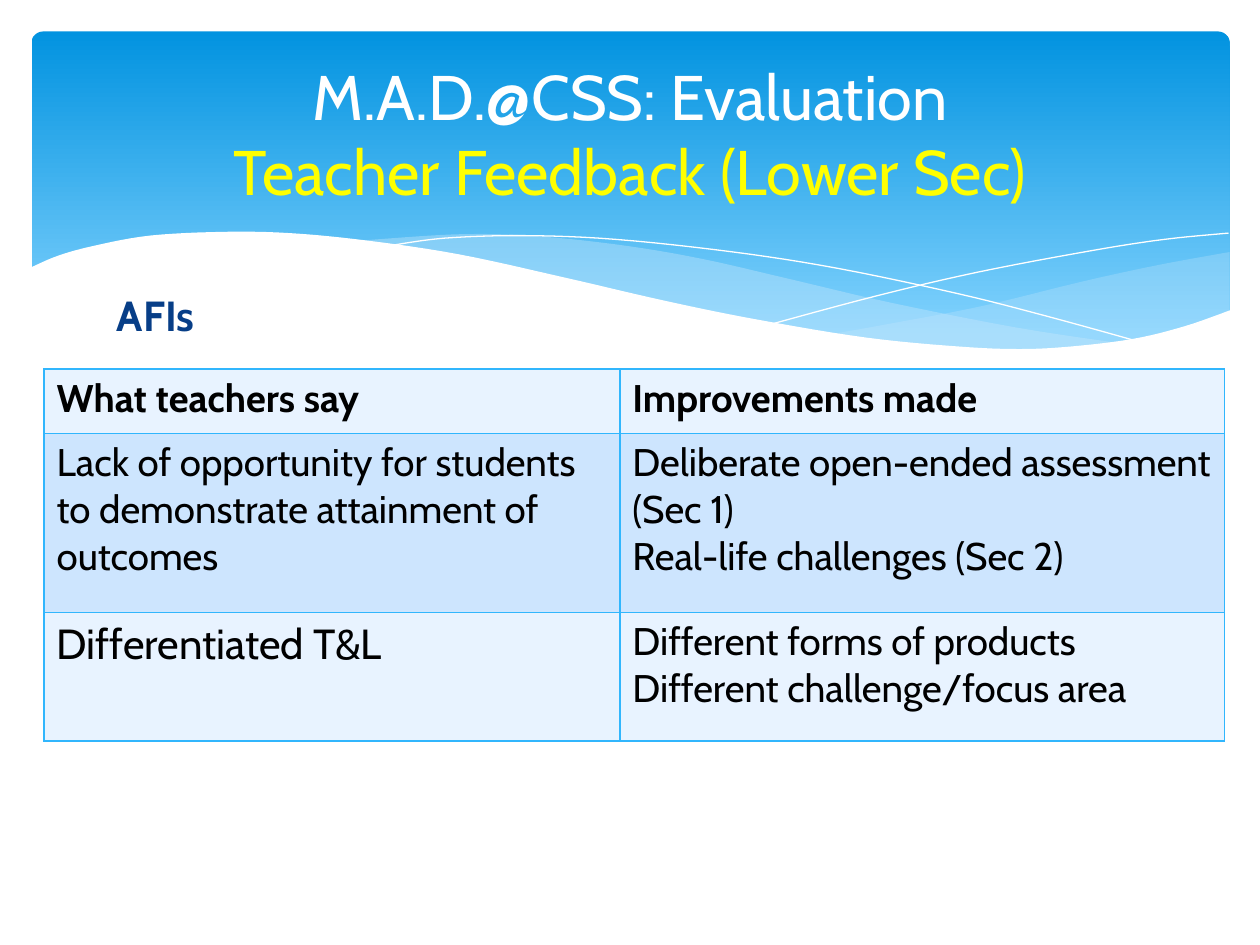
from dataclasses import dataclass

from pptx import Presentation
from pptx.dml.color import RGBColor as RGB
from pptx.enum.shapes import MSO_SHAPE as SHAPE
from pptx.enum.text import MSO_ANCHOR as ANCHOR, MSO_AUTO_SIZE as AUTO, PP_ALIGN as ALIGN
from pptx.oxml import parse_xml
from pptx.oxml.ns import nsdecls, qn
from pptx.util import Inches, Pt


@dataclass(frozen=True)
class Theme:
    font: str = "Cabin"
    title: int = 36
    large: int = 24
    body: int = 22
    white: str = "FFFFFF"
    black: str = "000000"
    yellow: str = "FFFF00"
    navy: str = "073E87"
    sky_top: str = "0293E0"
    sky_bottom: str = "83D3FE"
    ribbon: str = "C6E7FC"
    border: str = "31B6FD"
    rows: tuple = ("E8F3FF", "CDE5FE")


T = Theme()

# Anchor points of the wave edges, in inches
RIGHT_TOP = [(9.76, 2), (9.21, 2.1), (8.61, 2.23), (7.79, 2.43), (7.06, 2.57), (6.61, 2.65)]
RIGHT_BOTTOM = [(6.61, 2.65), (7.05, 2.71), (7.57, 2.76), (8.03, 2.78), (8.54, 2.76),
                (9.05, 2.69), (9.42, 2.59), (9.76, 2.47)]
LEFT_TOP = [(8.93, 2.73), (8.07, 2.6), (7.06, 2.4), (6.29, 2.22), (5.55, 2.05),
            (4.89, 1.94), (4.2, 1.87), (3.61, 1.86), (2.86, 1.91)]
LEFT_BOTTOM = [(2.86, 1.91), (3.62, 2.03), (4.49, 2.22), (5.3, 2.4), (6.01, 2.55),
               (6.8, 2.68), (7.48, 2.76), (8.18, 2.79), (8.93, 2.73)]
FALLING_LINE = [(3.09, 1.95), (3.53, 1.89), (4.16, 1.87), (4.89, 1.9), (5.82, 2),
                (6.65, 2.13), (7.6, 2.33), (8.31, 2.51), (9.07, 2.72)]
RISING_LINE = [(6.13, 2.57), (6.95, 2.35), (7.76, 2.16), (8.66, 1.99), (9.24, 1.9), (9.75, 1.85)]
WHITE_EDGE = [(9.77, 2.46), (9.4, 2.59), (8.99, 2.69), (8.5, 2.75), (8.09, 2.77),
              (7.61, 2.75), (6.88, 2.68), (6.03, 2.54), (5.29, 2.39), (4.47, 2.2),
              (3.65, 2.02), (2.92, 1.91), (2.3, 1.85), (1.77, 1.84), (1.19, 1.87),
              (0.75, 1.95), (0.46, 2.03), (0.23, 2.13)]

ROWS = [
    ("What teachers say", "Improvements made"),
    ("Lack of opportunity for students to demonstrate attainment of outcomes",
     "Deliberate open-ended assessment (Sec 1)\nReal-life challenges (Sec 2)"),
    ("Differentiated T&L", "Different forms of products\nDifferent challenge/focus area"),
]


def style_run(r, size, color, bold=False):
    r.font.name = T.font
    r.font.size = Pt(size)
    r.font.bold = bold
    r.font.color.rgb = RGB.from_string(color)


def smooth(points, steps=6):
    """Catmull-Rom curve through the points, as short segments."""
    padded = [points[0], *points, points[-1]]
    curve = [points[0]]
    for a, b, c, d in zip(padded, padded[1:], padded[2:], padded[3:]):
        for t in (i / steps for i in range(1, steps + 1)):
            curve.append(tuple(
                (2 * q + (r - p) * t + (2 * p - 5 * q + 4 * r - u) * t ** 2
                 + (3 * q - p - 3 * r + u) * t ** 3) / 2
                for p, q, r, u in zip(a, b, c, d)))
    return curve


def add_path(s, points, closed):
    pts = [(Inches(x), Inches(y)) for x, y in points]
    builder = s.shapes.build_freeform(*pts[0])
    builder.add_line_segments(pts[1:], close=closed)
    sp = builder.convert_to_shape()
    sp.shadow.inherit = False
    return sp


def add_area(s, points, color, alpha=100):
    sp = add_path(s, points, True)
    sp.fill.solid()
    sp.fill.fore_color.rgb = RGB.from_string(color)
    sp.line.fill.background()
    if alpha < 100:
        clr = next(sp.fill._xPr.iter(qn("a:srgbClr")))
        clr.append(parse_xml(f'<a:alpha {nsdecls("a")} val="{alpha * 1000}"/>'))


def add_curve(s, points):
    sp = add_path(s, smooth(points), False)
    sp.fill.background()
    sp.line.color.rgb = RGB.from_string(T.white)
    sp.line.width = Pt(0)


def add_banner(s):
    sp = s.shapes.add_shape(SHAPE.ROUNDED_RECTANGLE, Inches(0.25), Inches(0.25),
                            Inches(9.51), Inches(2.7))
    sp.adjustments[0] = 0.034
    sp.shadow.inherit = False
    sp.line.fill.background()
    sp.fill.gradient()
    sp.fill.gradient_angle = 270
    stops = zip(sp.fill.gradient_stops, (0, 0.9), (T.sky_top, T.sky_bottom))
    for stop, position, color in stops:
        stop.position = position
        stop.color.rgb = RGB.from_string(color)


def add_title(s, lines, colors):
    sp = s.shapes.title
    sp.left, sp.top, sp.width, sp.height = (Inches(v) for v in (0.5, 0.37, 9, 1.37))
    tf = sp.text_frame
    tf.auto_size = AUTO.NONE
    tf.vertical_anchor = ANCHOR.MIDDLE
    p = tf.paragraphs[0]
    p.text = "\v".join(lines)
    p.alignment = ALIGN.CENTER
    for r, color in zip(p.runs, colors):
        style_run(r, T.title, color)
    # Bring the title in front of the banner
    sp._element.getparent().append(sp._element)


def add_label(s, text):
    sp = s.shapes.add_textbox(Inches(0.83), Inches(2.25), Inches(2.99), Inches(0.51))
    tf = sp.text_frame
    tf.word_wrap = True
    tf.text = text
    style_run(tf.paragraphs[0].runs[0], T.large, T.navy, bold=True)


def set_borders(cell):
    tcPr = cell._tc.get_or_add_tcPr()
    for i, side in enumerate(("lnL", "lnR", "lnT", "lnB")):
        tcPr.insert(i, parse_xml(
            f'<a:{side} {nsdecls("a")} w="{Pt(1)}"><a:solidFill>'
            f'<a:srgbClr val="{T.border}"/></a:solidFill></a:{side}>'))


def add_feedback_table(s):
    table = s.shapes.add_table(len(ROWS), 2, Inches(0.35), Inches(2.93),
                               Inches(9.37), Inches(2.95)).table
    for col, width in zip(table.columns, (4.57, 4.8)):
        col.width = Inches(width)
    for row, height in zip(table.rows, (0.51, 1.42, 1.02)):
        row.height = Inches(height)
    for i, texts in enumerate(ROWS):
        for j, text in enumerate(texts):
            cell = table.cell(i, j)
            cell.text_frame.text = text
            cell.fill.solid()
            cell.fill.fore_color.rgb = RGB.from_string(T.rows[i % 2])
            set_borders(cell)
            size = T.large if (i, j) == (2, 0) else T.body
            for p in cell.text_frame.paragraphs:
                style_run(p.runs[0], size, T.black, bold=i == 0)


def main():
    prs = Presentation()
    prs.slide_width, prs.slide_height = Inches(10), Inches(7.5)
    s = prs.slides.add_slide(prs.slide_layouts[5])

    # Banner with its waves
    add_banner(s)
    add_area(s, smooth(RIGHT_TOP) + smooth(RIGHT_BOTTOM), T.ribbon, alpha=29)
    add_area(s, smooth(LEFT_TOP) + smooth(LEFT_BOTTOM), T.ribbon, alpha=40)
    add_curve(s, FALLING_LINE)
    add_curve(s, RISING_LINE)
    add_area(s, smooth(WHITE_EDGE) + [(0.23, 3.29), (9.77, 3.29)], T.white)

    # Content
    add_feedback_table(s)
    add_title(s, ("M.A.D.@CSS: Evaluation", "Teacher Feedback (Lower Sec)"),
              (T.white, T.yellow))
    add_label(s, "AFIs")
    prs.save("out.pptx")


if __name__ == "__main__":
    main()
